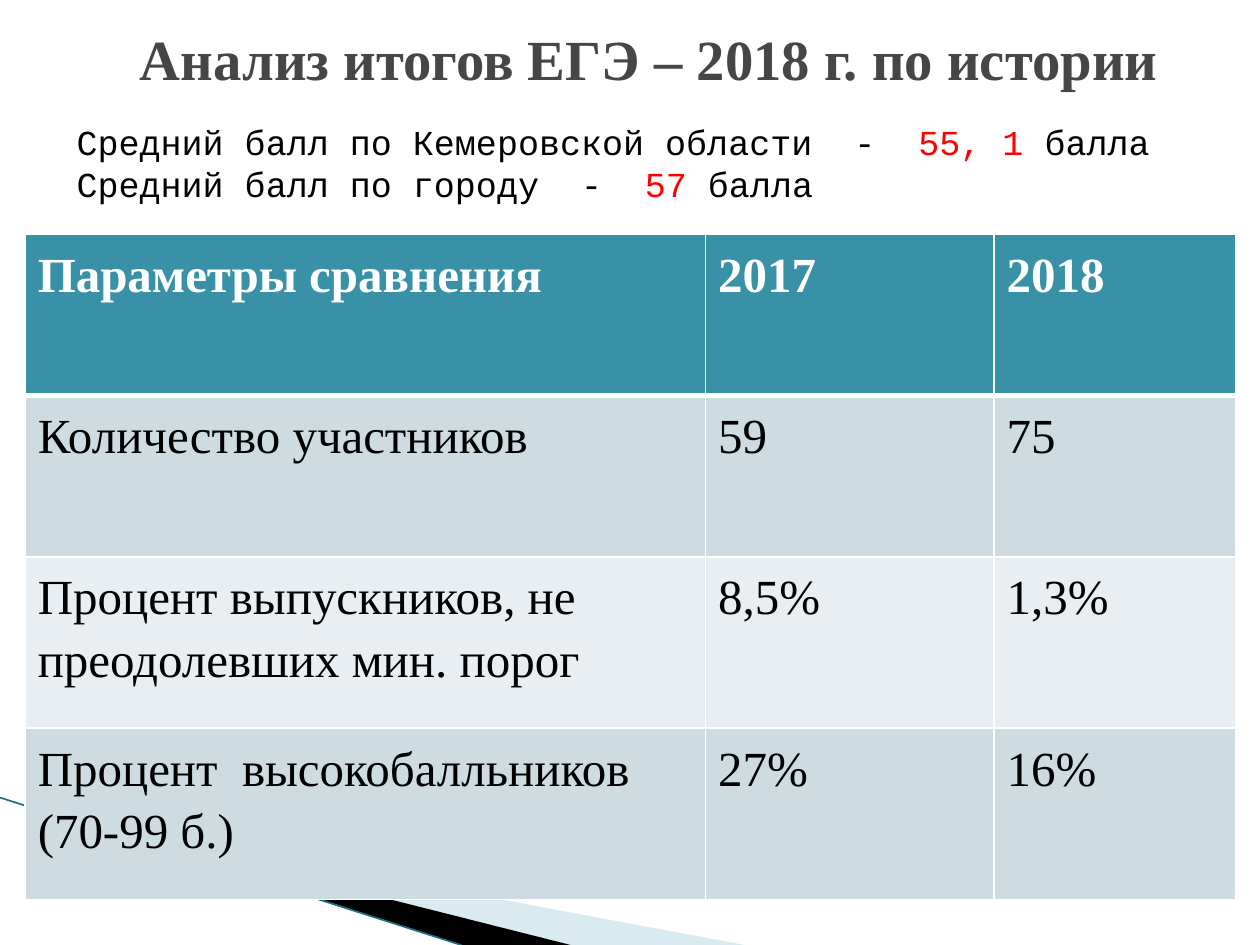
import pptx
import pptx.util
import pptx.dml.color
import pptx.enum.shapes
import pptx.enum.text
import pptx.oxml
import pptx.oxml.ns
from pptx.util import Inches, Pt

RGBColor = pptx.dml.color.RGBColor
BLACK = RGBColor(0x00, 0x00, 0x00)
WHITE = RGBColor(0xFF, 0xFF, 0xFF)
RED = RGBColor(0xFF, 0x00, 0x00)
GREY = RGBColor(0x46, 0x46, 0x46)
TEAL = RGBColor(0x38, 0x91, 0xA7)
BAND_DARK = RGBColor(0xCE, 0xDC, 0xE1)
BAND_LIGHT = RGBColor(0xE8, 0xEE, 0xF1)
PALE_BLUE = RGBColor(0xA0, 0xCB, 0xDC)
LINE_TEAL = RGBColor(0x1B, 0x6F, 0x80)

SERIF = "Times New Roman"
MONO = "Courier New"
WIDTH, HEIGHT = 10, 7.5

COLUMNS = [5.4, 2.29, 1.92]
ROW_HEIGHTS = [1.28, 1.28, 1.36, 1.36]
ROWS = [
    ("Параметры сравнения", "2017", "2018"),
    ("Количество участников", "59", "75"),
    ("Процент выпускников, не преодолевших мин. порог", "8,5%", "1,3%"),
    ("Процент  высокобалльников (70-99 б.)", "27%", "16%"),
]
ROW_FILLS = [TEAL, BAND_DARK, BAND_LIGHT, BAND_DARK]
AVERAGES = [
    ("Средний балл по Кемеровской области  -  ", "55, 1 ", "балла"),
    ("Средний балл по городу  -  ", "57 ", "балла"),
]


def a_element(tag, inner=""):
    ns = pptx.oxml.ns.nsdecls("a")
    return pptx.oxml.parse_xml(f"<a:{tag} {ns}>{inner}</a:{tag.split()[0]}>")


def set_font(font, name, size, color, bold=False):
    font.name, font.size, font.bold = name, Pt(size), bold
    font.color.rgb = color


def add_wedge(s, points, color, alpha=100):
    corners = [(Inches(x), Inches(y)) for x, y in points]
    builder = s.shapes.build_freeform(*corners[0])
    builder.add_line_segments(corners[1:], close=True)
    sp = builder.convert_to_shape()
    sp.shadow.inherit = False
    sp.fill.solid()
    sp.fill.fore_color.rgb = color
    sp.line.fill.background()
    if alpha < 100:
        clr = sp.fill._xPr.find(".//" + pptx.oxml.ns.qn("a:srgbClr"))
        clr.append(a_element(f'alpha val="{alpha * 1000}"'))


def add_line(s, start, end, color, width):
    ends = [Inches(v) for v in (*start, *end)]
    c = s.shapes.add_connector(pptx.enum.shapes.MSO_CONNECTOR.STRAIGHT, *ends)
    c.line.color.rgb = color
    c.line.width = Pt(width)
    c._element.spPr.append(a_element("effectLst"))


def add_textbox(s, left, top, width, height):
    box = s.shapes.add_textbox(*(Inches(v) for v in (left, top, width, height)))
    box.text_frame.word_wrap = True
    return box.text_frame


def set_borders(cell, top, bottom):
    fill = f'<a:solidFill><a:srgbClr val="{WHITE}"/></a:solidFill>'
    widths = {"lnL": 1, "lnR": 1, "lnT": top, "lnB": bottom}
    for i, (tag, width) in enumerate(widths.items()):
        line = a_element(f'{tag} w="{Pt(width)}"', fill)
        cell._tc.get_or_add_tcPr().insert(i, line)


def add_results_table(s, left, top):
    frame = s.shapes.add_table(
        len(ROWS), len(COLUMNS), Inches(left), Inches(top),
        Inches(sum(COLUMNS)), Inches(sum(ROW_HEIGHTS)))
    table = frame.table
    for column, width in zip(table.columns, COLUMNS):
        column.width = Inches(width)
    for i, (row, height) in enumerate(zip(table.rows, ROW_HEIGHTS)):
        row.height = Inches(height)
        header = i == 0
        for j, text in enumerate(ROWS[i]):
            cell = table.cell(i, j)
            cell.fill.solid()
            cell.fill.fore_color.rgb = ROW_FILLS[i]
            # A thick rule separates the header from the body
            set_borders(cell, 3 if i == 1 else 1, 3 if header else 1)
            p = cell.text_frame.paragraphs[0]
            p.text = text
            p.line_spacing = 1.15
            if j == 1:
                p.space_after = Pt(10)
            set_font(p.font, SERIF, 28, WHITE if header else BLACK, header)


def add_title(s, text):
    tf = add_textbox(s, 0.5, 0.3, 9.3, 0.85)
    tf.vertical_anchor = pptx.enum.text.MSO_ANCHOR.MIDDLE
    tf.margin_bottom = Inches(0.66)
    p = tf.paragraphs[0]
    p.text = text
    p.alignment = pptx.enum.text.PP_ALIGN.CENTER
    p.line_spacing = 1.15
    set_font(p.font, SERIF, 32.4, GREY, True)


def add_averages(s):
    tf = add_textbox(s, 0.51, 0.91, 8.9, 0.77)
    for i, parts in enumerate(AVERAGES):
        p = tf.add_paragraph() if i else tf.paragraphs[0]
        for text, color in zip(parts, (BLACK, RED, BLACK)):
            r = p.add_run()
            r.text = text
            set_font(r.font, MONO, 20, color)


def main():
    prs = pptx.Presentation()
    prs.slide_width, prs.slide_height = Inches(WIDTH), Inches(HEIGHT)
    s = prs.slides.add_slide(prs.slide_layouts[6])

    # Decorative wedges in the bottom left corner
    add_wedge(s, [(0.55, 6.5), (5.91, HEIGHT), (4.53, HEIGHT)], PALE_BLUE, 40)
    add_wedge(s, [(0.53, 6.49), (4.53, HEIGHT), (3.67, HEIGHT)], BLACK)
    add_line(s, (0, 6.33), (3.66, HEIGHT), LINE_TEAL, 0.95)

    # Results, heading and average scores
    add_results_table(s, 0.2, 1.86)
    add_title(s, "Анализ итогов ЕГЭ – 2018 г. по истории")
    add_averages(s)

    prs.save("out.pptx")


if __name__ == "__main__":
    main()
